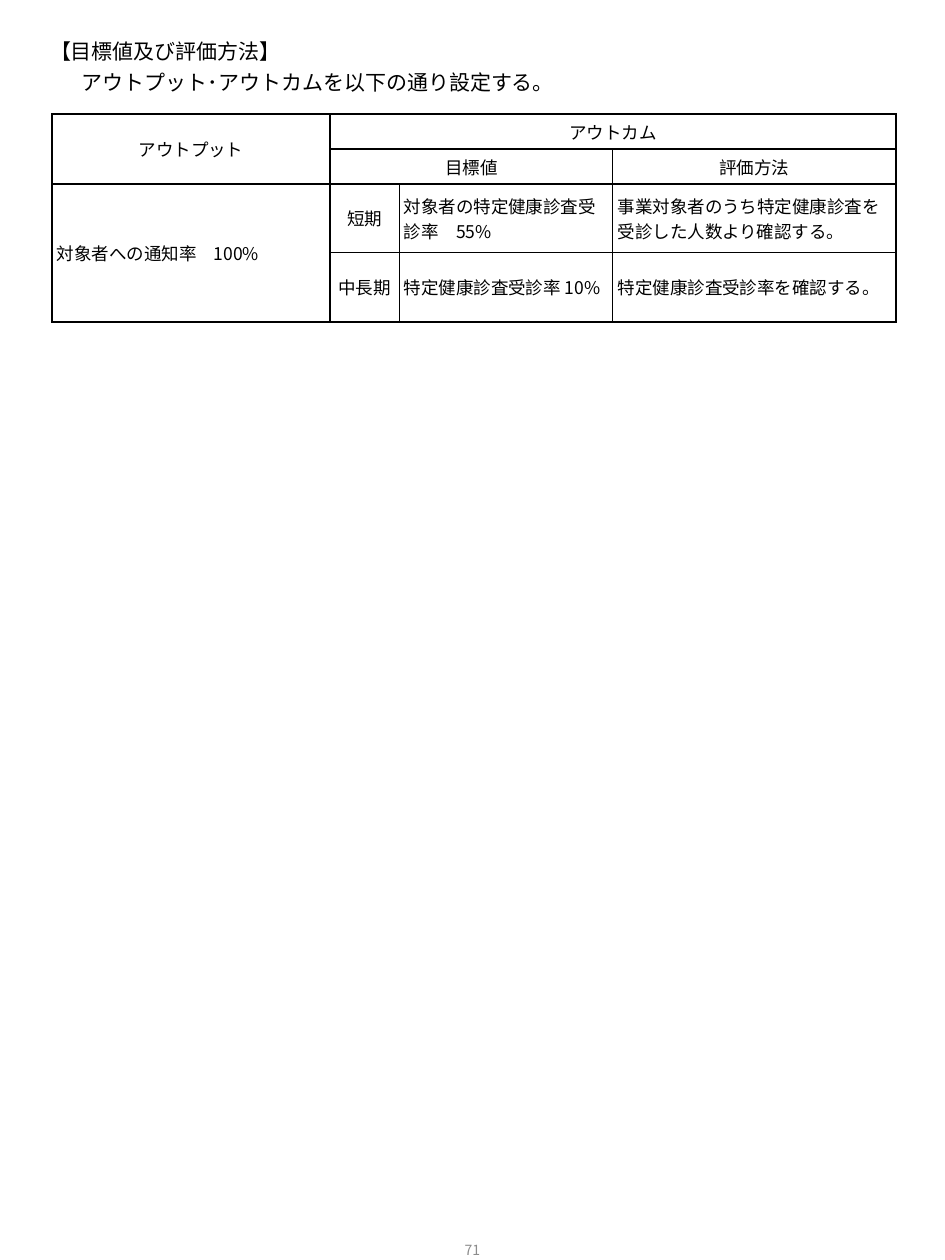
from lxml.etree import SubElement
from pptx import Presentation
from pptx.dml.color import RGBColor
from pptx.enum.text import MSO_ANCHOR as Anchor, MSO_AUTO_SIZE as AutoSize, PP_ALIGN as Align
from pptx.oxml import parse_xml
from pptx.oxml.ns import nsdecls, qn
from pptx.util import Emu, Pt

BLACK = RGBColor(0x00, 0x00, 0x00)
GRAY = RGBColor(0x8C, 0x8C, 0x8C)
FONT = "Noto Sans CJK JP"
PX_PER_INCH = 126

HEADING = ["【目標値及び評価方法】", "\u3000アウトプット･アウトカムを以下の通り設定する。".replace("\u3000", "　")]
COLUMNS = [278, 69, 214, 283]
ROWS = [35, 35, 69, 69]
MERGES = [(0, 0, 1, 0), (0, 1, 0, 3), (1, 1, 1, 2), (2, 0, 3, 0)]
GOALS = {
    (0, 0): "アウトプット",
    (0, 1): "アウトカム",
    (1, 1): "目標値",
    (1, 3): "評価方法",
    (2, 0): "対象者への通知率　100%",
    (2, 1): "短期",
    (2, 2): "対象者の特定健康診査受診率　55%",
    (2, 3): "事業対象者のうち特定健康診査を受診した人数より確認する。",
    (3, 1): "中長期",
    (3, 2): "特定健康診査受診率 10%",
    (3, 3): "特定健康診査受診率を確認する。",
}


def px(length):
    return Emu(round(length * 914400 / PX_PER_INCH))


def format_paragraph(paragraph, size, color, align):
    paragraph.alignment = align
    for run in paragraph.runs:
        run.font.size = Pt(size)
        run.font.color.rgb = color
        run.font.name = FONT
        SubElement(run.font._element, qn("a:ea"), typeface=FONT)


def set_margins(holder, side, end):
    holder.margin_left = holder.margin_right = px(side)
    holder.margin_top = holder.margin_bottom = px(end)


def draw_borders(cell, row, col):
    inner = {
        "L": row >= 1 and col >= 2,
        "R": row >= 1 and col in (1, 2),
        "T": row == 3 and col >= 1,
        "B": row == 2 and col >= 1,
    }
    properties = cell._tc.get_or_add_tcPr()
    for position, (side, thin) in enumerate(inner.items()):
        width = Pt(0.5 if thin else 1)
        properties.insert(position, parse_xml(
            f'<a:ln{side} {nsdecls("a")} w="{width}"><a:solidFill>'
            f'<a:srgbClr val="{BLACK}"/></a:solidFill></a:ln{side}>'))


def add_heading(slide, left, top, width, height):
    title = slide.shapes.title
    title.left, title.top, title.width, title.height = map(px, (left, top, width, height))
    frame = title.text_frame
    frame.text = "\n".join(HEADING)
    frame.word_wrap = True
    frame.auto_size = AutoSize.NONE
    frame.vertical_anchor = Anchor.TOP
    set_margins(frame, 0, 6)
    for paragraph in frame.paragraphs:
        format_paragraph(paragraph, 12, BLACK, Align.LEFT)
        paragraph.line_spacing = 1.25
        paragraph.space_before = Pt(0)
    frame.paragraphs[1]._p.get_or_add_pPr().set("marL", str(px(11)))


def add_goals_table(slide, left, top, width, height):
    goals = slide.shapes.add_table(
        len(ROWS), len(COLUMNS), *map(px, (left, top, width, height))).table
    goals.first_row = goals.horz_banding = False
    for column, share in zip(goals.columns, COLUMNS):
        column.width = px(width * share / sum(COLUMNS))
    for row, share in zip(goals.rows, ROWS):
        row.height = px(height * share / sum(ROWS))
    for first_row, first_col, last_row, last_col in MERGES:
        goals.cell(first_row, first_col).merge(goals.cell(last_row, last_col))
    for row in range(len(ROWS)):
        for col in range(len(COLUMNS)):
            cell = goals.cell(row, col)
            cell.fill.background()
            draw_borders(cell, row, col)
            set_margins(cell, 5, 1)
            cell.vertical_anchor = Anchor.MIDDLE
            if (row, col) in GOALS:
                cell.text = GOALS[row, col]
                centered = row < 2 or col == 1
                format_paragraph(cell.text_frame.paragraphs[0], 10, BLACK,
                                 Align.CENTER if centered else Align.LEFT)


def add_page_number(slide, left, top, width, height):
    frame = slide.shapes.add_textbox(*map(px, (left, top, width, height))).text_frame
    frame.text = "71"
    frame.word_wrap = True
    frame.vertical_anchor = Anchor.MIDDLE
    format_paragraph(frame.paragraphs[0], 8, GRAY, Align.CENTER)


def main():
    presentation = Presentation()
    presentation.slide_width, presentation.slide_height = px(945), px(1260)
    slide = presentation.slides.add_slide(presentation.slide_layouts[5])
    add_heading(slide, 50, 26, 843, 78)
    add_page_number(slide, 362, 1216, 221, 67)
    add_goals_table(slide, 52, 114, sum(COLUMNS), sum(ROWS))
    presentation.save("out.pptx")


if __name__ == "__main__":
    main()
